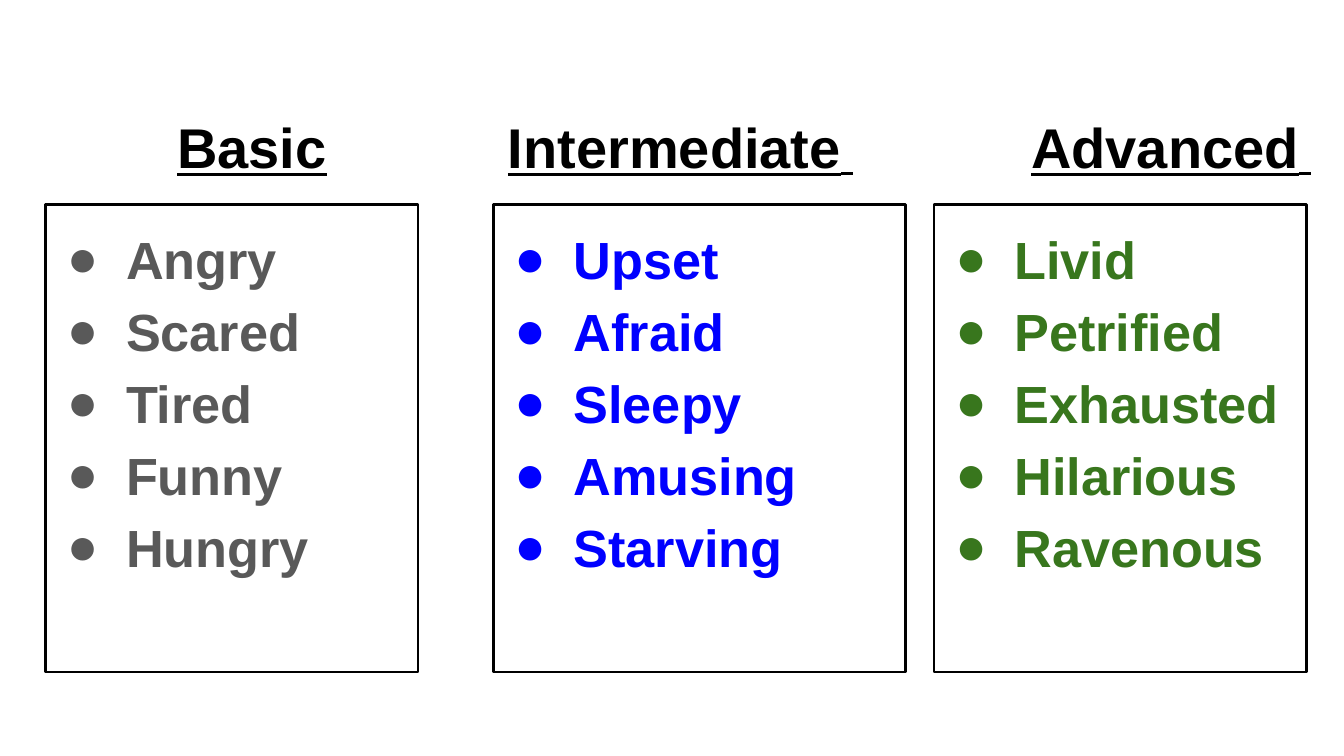
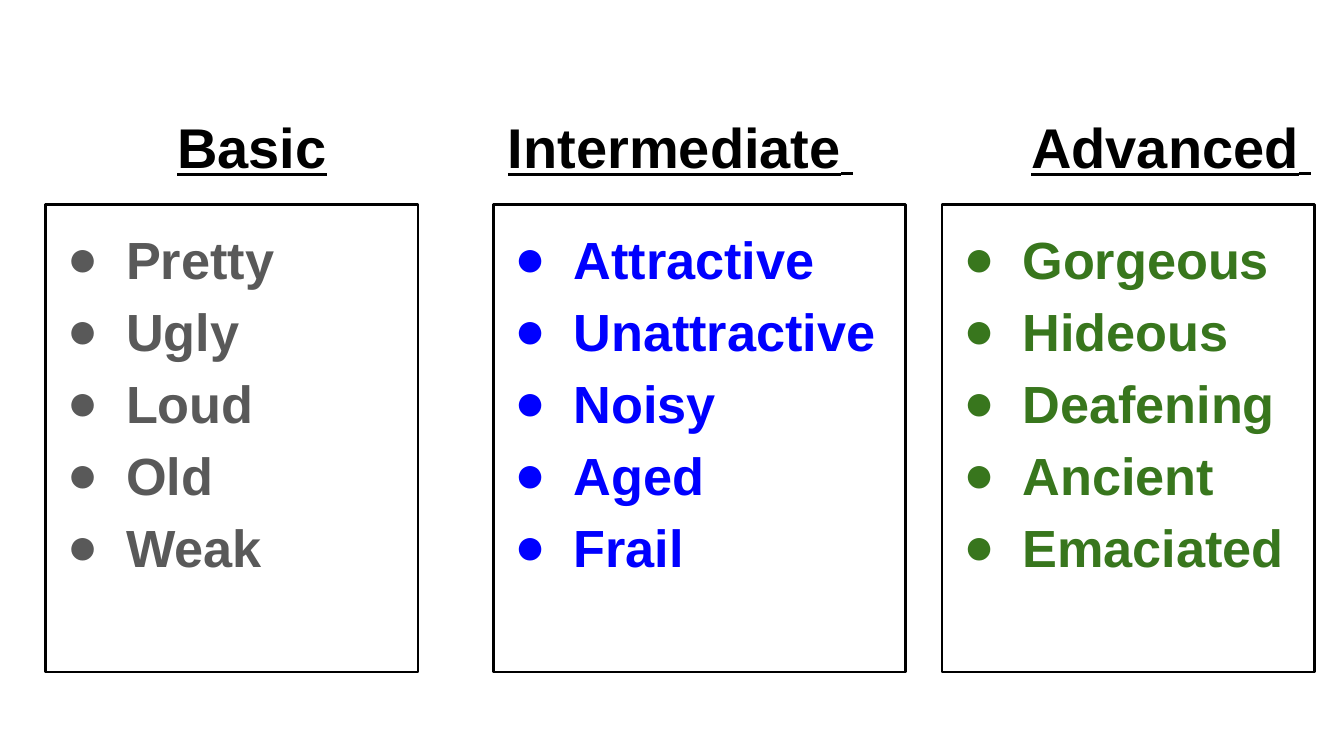
import dataclasses

import lxml.etree
import pptx
import pptx.dml.color
import pptx.enum.shapes
import pptx.enum.text
import pptx.oxml.ns
import pptx.util

PX = 4572  # EMU in one px, 200 px to the inch


@dataclasses.dataclass(frozen=True)
class Theme:
    font: str = "Arial"
    ink: str = "000000"
    paper: str = "FFFFFF"
    tints: tuple = ("595959", "0000FF", "38761D")
    head_size: int = 30
    tail_size: int = 24
    word_size: int = 28
    line: float = 1.5
    leading: float = 1.15


def rgb(code):
    return pptx.dml.color.RGBColor.from_string(code)


class Deck:
    def __init__(self, theme, width, height):
        self.theme = theme
        self.show = pptx.Presentation()
        self.show.slide_width = width * PX
        self.show.slide_height = height * PX
        self.slide = None

    def page(self):
        self.slide = self.show.slides.add_slide(self.show.slide_layouts[5])
        fill = self.slide.background.fill
        fill.solid()
        fill.fore_color.rgb = rgb(self.theme.paper)

    def frame(self, shape, anchor):
        """Give the shape equal insets and return its text frame."""
        frame = shape.text_frame
        frame.word_wrap = True
        frame.auto_size = pptx.enum.text.MSO_AUTO_SIZE.NONE
        frame.vertical_anchor = anchor
        frame.margin_left = frame.margin_right = 20 * PX
        frame.margin_top = frame.margin_bottom = 20 * PX
        return frame

    def run(self, para, text, size, color, under=None):
        run = para.add_run()
        run.text = text
        font = run.font
        font.name = self.theme.font
        font.size = pptx.util.Pt(size)
        font.color.rgb = rgb(color)
        font.bold = True
        font.underline = under

    def head(self, text, tail, left, top, width, height):
        """Add a heading; the first one on a slide is its title."""
        shape = self.slide.shapes.title
        if shape.text_frame.text:
            shape = self.slide.shapes.add_textbox(0, 0, PX, PX)
        shape.left, shape.top = left * PX, top * PX
        shape.width, shape.height = width * PX, height * PX
        frame = self.frame(shape, pptx.enum.text.MSO_ANCHOR.BOTTOM)
        para = frame.paragraphs[0]
        para.alignment = pptx.enum.text.PP_ALIGN.CENTER
        self.run(para, text, self.theme.head_size, self.theme.ink, True)
        if tail:
            self.run(para, tail, self.theme.tail_size, self.theme.ink, True)

    def bullet(self, para, color):
        props = para._p.get_or_add_pPr()
        props.set("marL", str(100 * PX))
        props.set("indent", str(-88 * PX))
        tag = pptx.oxml.ns.qn
        tint = lxml.etree.SubElement(props, tag("a:buClr"))
        lxml.etree.SubElement(tint, tag("a:srgbClr"), val=color)
        lxml.etree.SubElement(props, tag("a:buFont"), typeface=self.theme.font)
        lxml.etree.SubElement(props, tag("a:buChar"), char="●")

    def box(self, words, color, left, top, width, height):
        """Add an outlined box with a bulleted word list."""
        shape = self.slide.shapes.add_shape(
            pptx.enum.shapes.MSO_SHAPE.RECTANGLE,
            left * PX, top * PX, width * PX, height * PX)
        shape.shadow.inherit = False
        shape.fill.background()
        shape.line.color.rgb = rgb(self.theme.ink)
        shape.line.width = pptx.util.Pt(self.theme.line)
        frame = self.frame(shape, pptx.enum.text.MSO_ANCHOR.TOP)
        for i, word in enumerate(words):
            para = frame.add_paragraph() if i else frame.paragraphs[0]
            para.alignment = pptx.enum.text.PP_ALIGN.LEFT
            para.line_spacing = self.theme.leading
            self.bullet(para, color)
            self.run(para, word, self.theme.word_size, color)


# heading, trailing text, left edge
HEADS = (("Basic", "", 68), ("Intermediate", " ", 706), ("Advanced", " ", 1436))
WIDTHS = (554, 614, 554)

# left edges of the boxes, then their word lists
PAGES = (
    ((68, 734, 1390), (
        ("Angry", "Scared", "Tired", "Funny", "Hungry"),
        ("Upset", "Afraid", "Sleepy", "Amusing", "Starving"),
        ("Livid", "Petrified", "Exhausted", "Hilarious", "Ravenous"))),
    ((68, 734, 1402), (
        ("Pretty", "Ugly", "Loud", "Old", "Weak"),
        ("Attractive", "Unattractive", "Noisy", "Aged", "Frail"),
        ("Gorgeous", "Hideous", "Deafening", "Ancient", "Emaciated"))),
)


def main():
    deck = Deck(Theme(), 2000, 1125)
    for lefts, lists in PAGES:
        deck.page()
        for words, tint, left, width in zip(lists, deck.theme.tints, lefts, WIDTHS):
            deck.box(words, tint, left, 304, width, 696)
        for text, tail, left in HEADS:
            deck.head(text, tail, left, 122, 614, 166)
    deck.show.save("out.pptx")


if __name__ == "__main__":
    main()
